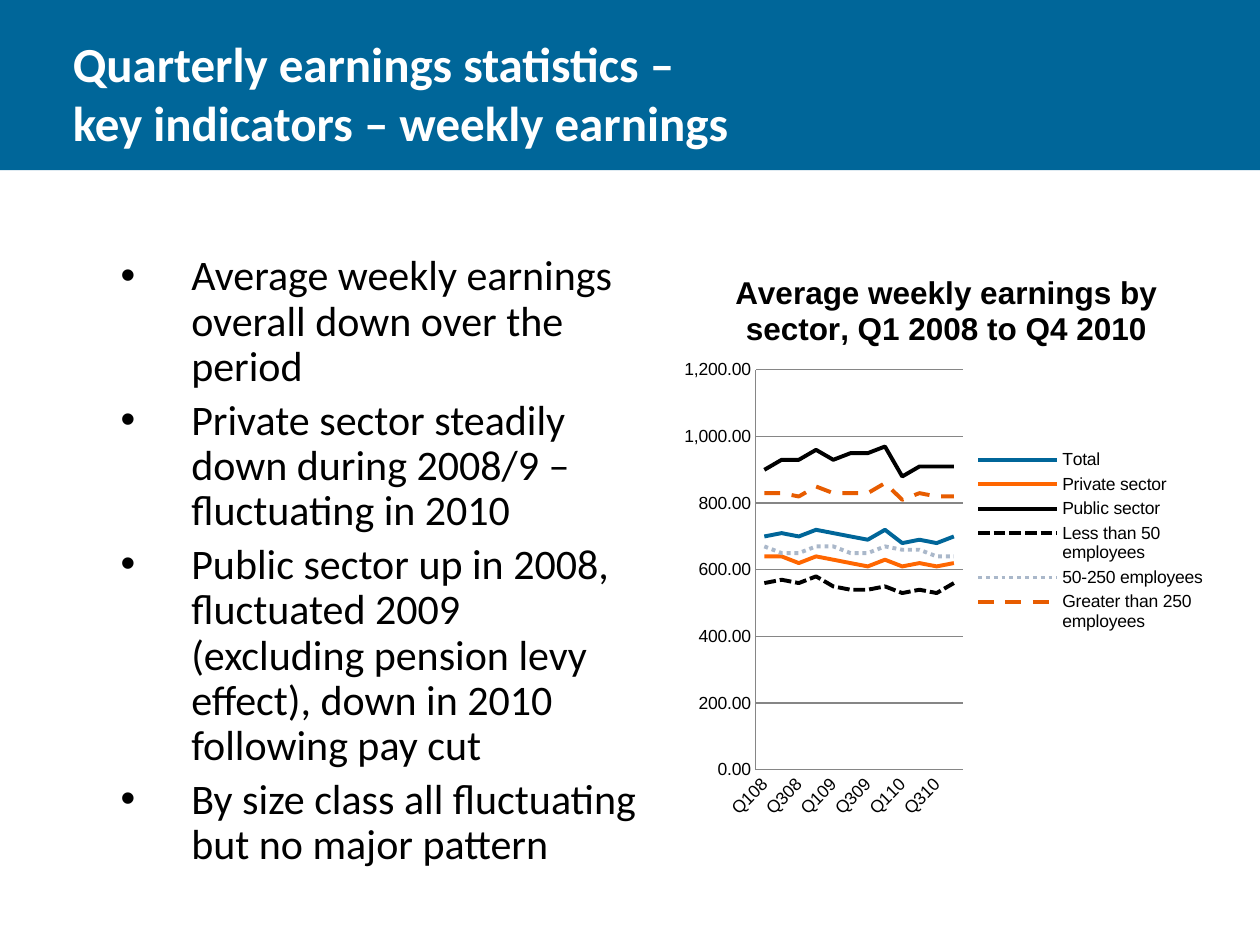
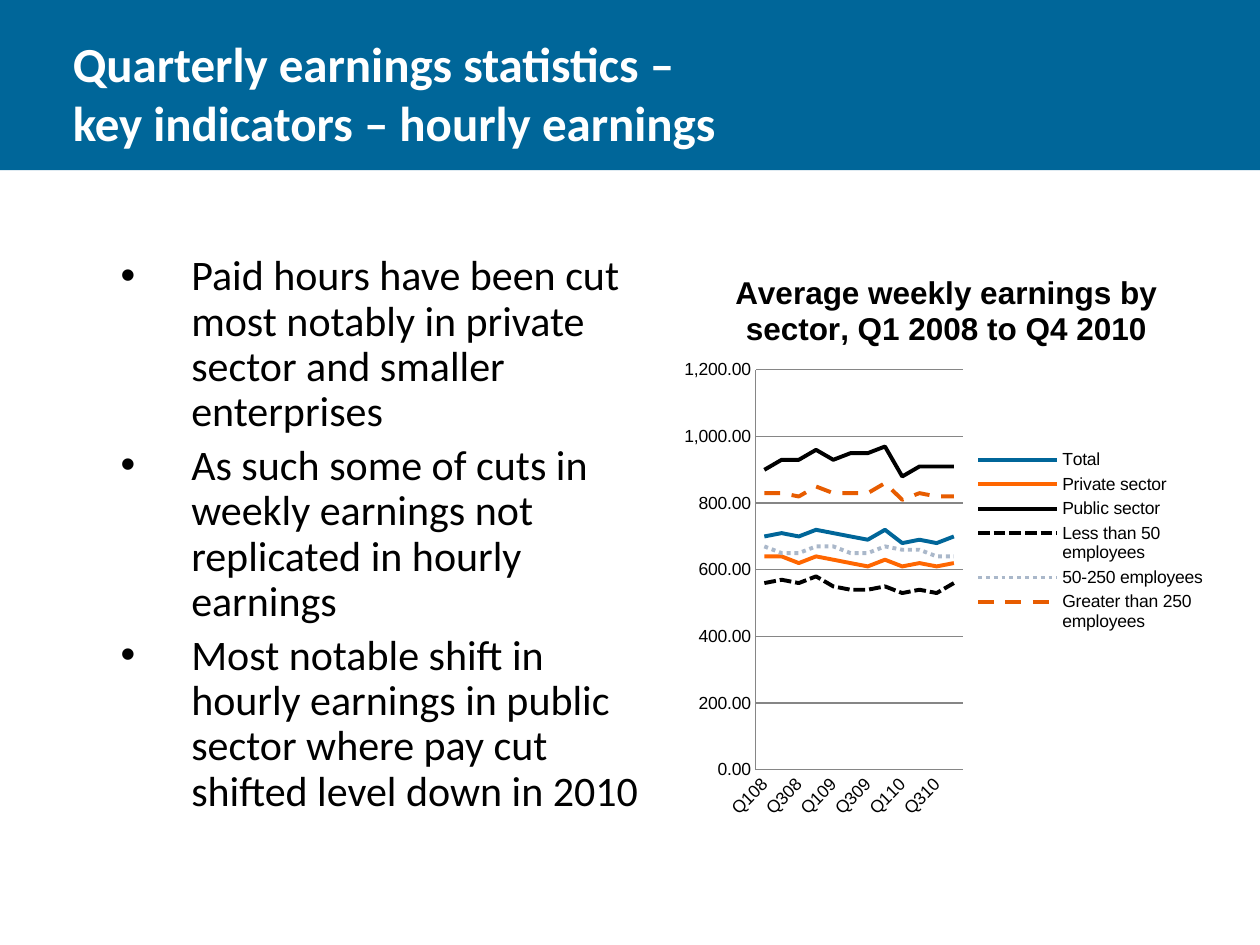
import pptx
import pptx.chart.data
import pptx.dml.color
import pptx.enum.chart
import pptx.enum.dml
import pptx.enum.shapes
import pptx.enum.text
import pptx.oxml
import pptx.oxml.ns
import pptx.util

Inches = pptx.util.Inches
Pt = pptx.util.Pt
qn = pptx.oxml.ns.qn
DASH = pptx.enum.dml.MSO_LINE

COLORS = {
    "band": "006699",
    "title": "FFFFFF",
    "text": "000000",
    "grid": "868686",
    "total": "006699",
    "private": "FF6600",
    "public": "000000",
    "small": "000000",
    "medium": "AAB8CA",
    "large": "E75C00",
}

SLIDES = [
    (
        "Quarterly earnings statistics – key indicators – weekly earnings",
        [
            "Average weekly earnings overall down over the period",
            "Private sector steadily down during 2008/9 – fluctuating in 2010",
            "Public sector up in 2008, fluctuated 2009 (excluding pension levy effect), "
            "down in 2010 following pay cut",
            "By size class all fluctuating but no major pattern",
        ],
    ),
    (
        "Quarterly earnings statistics – key indicators – hourly earnings",
        [
            "Paid hours have been cut most notably in private sector and smaller enterprises",
            "As such some of cuts in weekly earnings not replicated in hourly earnings",
            "Most notable shift in hourly earnings in public sector where pay cut "
            "shifted level down in 2010",
        ],
    ),
]

CHART_TITLE = "Average weekly earnings by sector, Q1 2008 to Q4 2010"
QUARTERS = [f"Q{quarter}{year}" for year in ("08", "09", "10") for quarter in range(1, 5)]
SERIES = [
    ("Total", "total", DASH.SOLID,
     [700, 710, 700, 720, 710, 700, 690, 720, 680, 690, 680, 700]),
    ("Private sector", "private", DASH.SOLID,
     [640, 640, 620, 640, 630, 620, 610, 630, 610, 620, 610, 620]),
    ("Public sector", "public", DASH.SOLID,
     [900, 930, 930, 960, 930, 950, 950, 970, 880, 910, 910, 910]),
    ("Less than 50 employees", "small", DASH.SQUARE_DOT,
     [560, 570, 560, 580, 550, 540, 540, 550, 530, 540, 530, 560]),
    ("50-250 employees", "medium", DASH.ROUND_DOT,
     [670, 650, 650, 670, 670, 650, 650, 670, 660, 660, 640, 640]),
    ("Greater than 250 employees", "large", DASH.DASH,
     [830, 830, 820, 850, 830, 830, 830, 860, 810, 830, 820, 820]),
]

BAND = (0, 0, 10, 1.35)
TITLE = (0.48, 0, 5.46, 1.25)
BODY = (0.86, 1.97, 4.31, 4.6)
CHART = (5.35, 1.97, 4.32, 4.6)
PLOT_LAYOUT = (0.15, 0.21, 0.38, 0.69)
LEGEND_LAYOUT = (0.55, 0.34, 0.43, 0.33)


def box(area):
    return [Inches(length) for length in area]


def color(name):
    return pptx.dml.color.RGBColor.from_string(COLORS[name])


def style_font(font, name, size, color_name, bold=False):
    font.name = name
    font.size = Pt(size)
    font.bold = bold
    font.color.rgb = color(color_name)


def style_line(line, color_name, width):
    line.color.rgb = color(color_name)
    line.width = Pt(width)


def add_band(slide):
    band = slide.shapes.add_shape(pptx.enum.shapes.MSO_SHAPE.RECTANGLE, *box(BAND))
    band.shadow.inherit = False
    band.fill.solid()
    band.fill.fore_color.rgb = color("band")
    band.line.fill.background()


def add_title(slide, text):
    frame = slide.shapes.add_textbox(*box(TITLE)).text_frame
    frame.word_wrap = True
    frame.vertical_anchor = pptx.enum.text.MSO_ANCHOR.BOTTOM
    run = frame.paragraphs[0].add_run()
    run.text = text
    style_font(run.font, "Calibri", 28, "title", True)


def add_bullets(slide, bullets):
    frame = slide.shapes.add_textbox(*box(BODY)).text_frame
    frame.word_wrap = True
    for index, text in enumerate(bullets):
        paragraph = frame.add_paragraph() if index else frame.paragraphs[0]
        paragraph.line_spacing = 0.9
        paragraph.space_before = Pt(4.8 if index else 0)
        properties = paragraph._p.get_or_add_pPr()
        properties.set("marL", str(Inches(0.56)))
        properties.set("indent", str(-Inches(0.56)))
        for tag, key, value in (("a:buFont", "typeface", "Arial"), ("a:buChar", "char", "•")):
            bullet = pptx.oxml.parse_xml(f'<{tag} {pptx.oxml.ns.nsdecls("a")} {key}="{value}"/>')
            properties.append(bullet)
        run = paragraph.add_run()
        run.text = text
        style_font(run.font, "Calibri", 24, "text")


def set_layout(parent, index, fractions, inner=False):
    for old_layout in parent.findall(qn("c:layout")):
        parent.remove(old_layout)
    target = '<c:layoutTarget val="inner"/>' if inner else ""
    modes = "".join(f'<c:{side}Mode val="edge"/>' for side in "xy")
    values = "".join(f'<c:{side} val="{value}"/>' for side, value in zip("xywh", fractions))
    parent.insert(index, pptx.oxml.parse_xml(
        f'<c:layout {pptx.oxml.ns.nsdecls("c")}><c:manualLayout>'
        f"{target}{modes}{values}</c:manualLayout></c:layout>"))


def style_axes(chart):
    for axis in (chart.category_axis, chart.value_axis):
        axis.major_tick_mark = pptx.enum.chart.XL_TICK_MARK.NONE
        axis.minor_tick_mark = pptx.enum.chart.XL_TICK_MARK.NONE
        style_line(axis.format.line, "grid", 0.75)
        style_font(axis.tick_labels.font, "Arial", 10, "text")
    values = chart.value_axis
    values.minimum_scale, values.maximum_scale, values.major_unit = 0, 1200, 200
    values.tick_labels.number_format = "#,##0.00"
    values.tick_labels.number_format_is_linked = False
    values.has_major_gridlines = True
    style_line(values.major_gridlines.format.line, "grid", 0.75)
    categories = chart.category_axis._element
    categories.find(qn("c:txPr")).find(qn("a:bodyPr")).set("rot", "-2700000")
    categories.find(qn("c:noMultiLvlLbl")).addprevious(pptx.oxml.parse_xml(
        f'<c:tickLblSkip {pptx.oxml.ns.nsdecls("c")} val="2"/>'))


def add_earnings_chart(slide):
    data = pptx.chart.data.CategoryChartData(number_format="#,##0.00")
    data.categories = QUARTERS
    for name, _, _, values in SERIES:
        data.add_series(name, values)
    chart = slide.shapes.add_chart(
        pptx.enum.chart.XL_CHART_TYPE.LINE, *box(CHART), data).chart
    style_font(chart.font, "Arial", 10, "text")
    chart.has_title = True
    run = chart.chart_title.text_frame.paragraphs[0].add_run()
    run.text = CHART_TITLE
    style_font(run.font, "Arial", 18, "text", True)
    chart.plots[0].vary_by_categories = False
    for series, (_, color_name, dash, _) in zip(chart.plots[0].series, SERIES):
        series.smooth = False
        series.marker.style = pptx.enum.chart.XL_MARKER_STYLE.NONE
        style_line(series.format.line, color_name, 2.25)
        series.format.line.dash_style = dash
    style_axes(chart)
    chart.has_legend = True
    chart.legend.position = pptx.enum.chart.XL_LEGEND_POSITION.RIGHT
    chart.legend.include_in_layout = False
    style_font(chart.legend.font, "Arial", 10, "text")
    set_layout(chart._chartSpace.chart.plotArea, 0, PLOT_LAYOUT, True)
    set_layout(chart.legend._element, 1, LEGEND_LAYOUT)


def main():
    presentation = pptx.Presentation()
    presentation.slide_width, presentation.slide_height = Inches(10), Inches(7.5)
    for title, bullets in SLIDES:
        slide = presentation.slides.add_slide(presentation.slide_layouts[6])
        add_band(slide)
        add_title(slide, title)
        add_bullets(slide, bullets)
        add_earnings_chart(slide)
    presentation.save("out.pptx")


if __name__ == "__main__":
    main()
